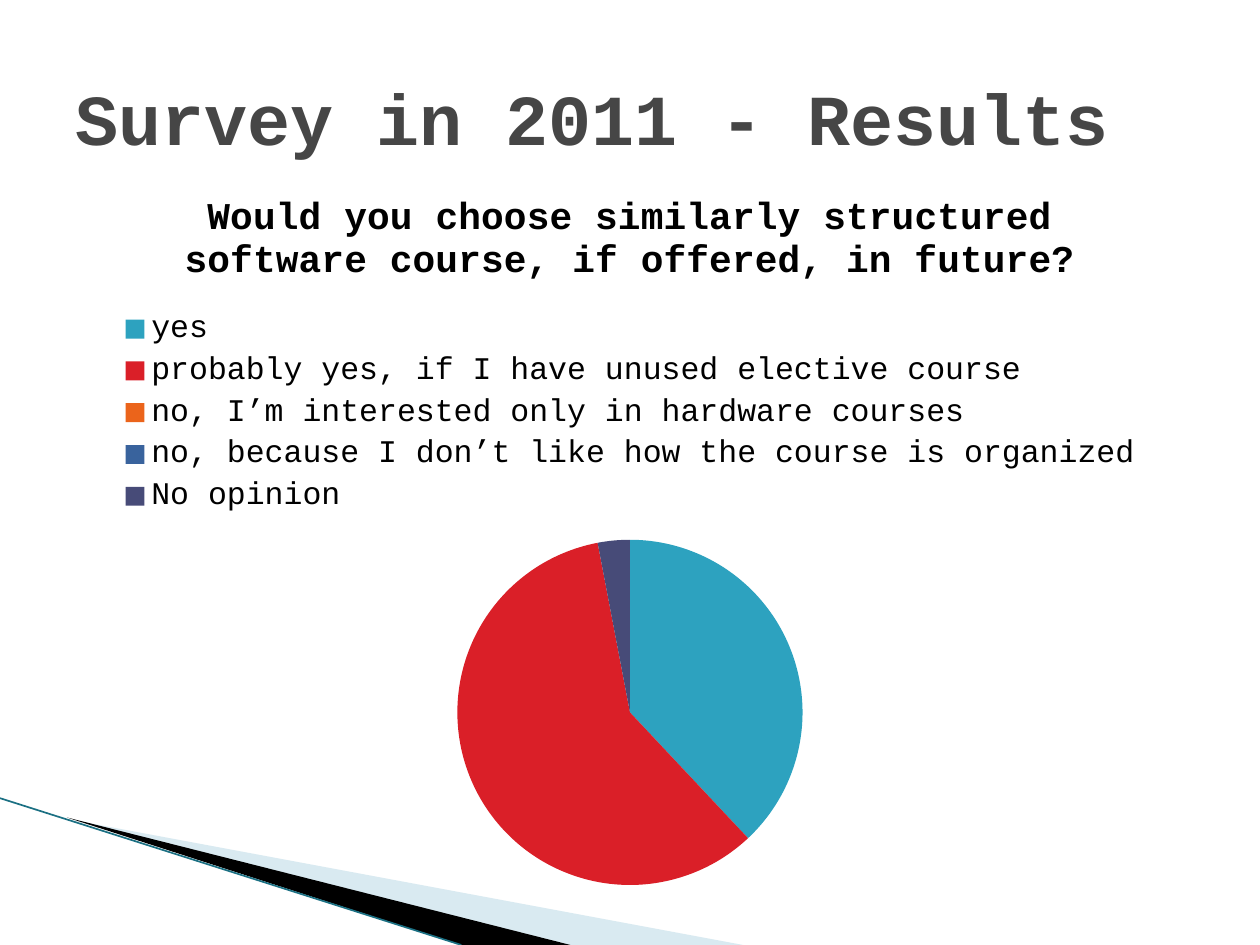
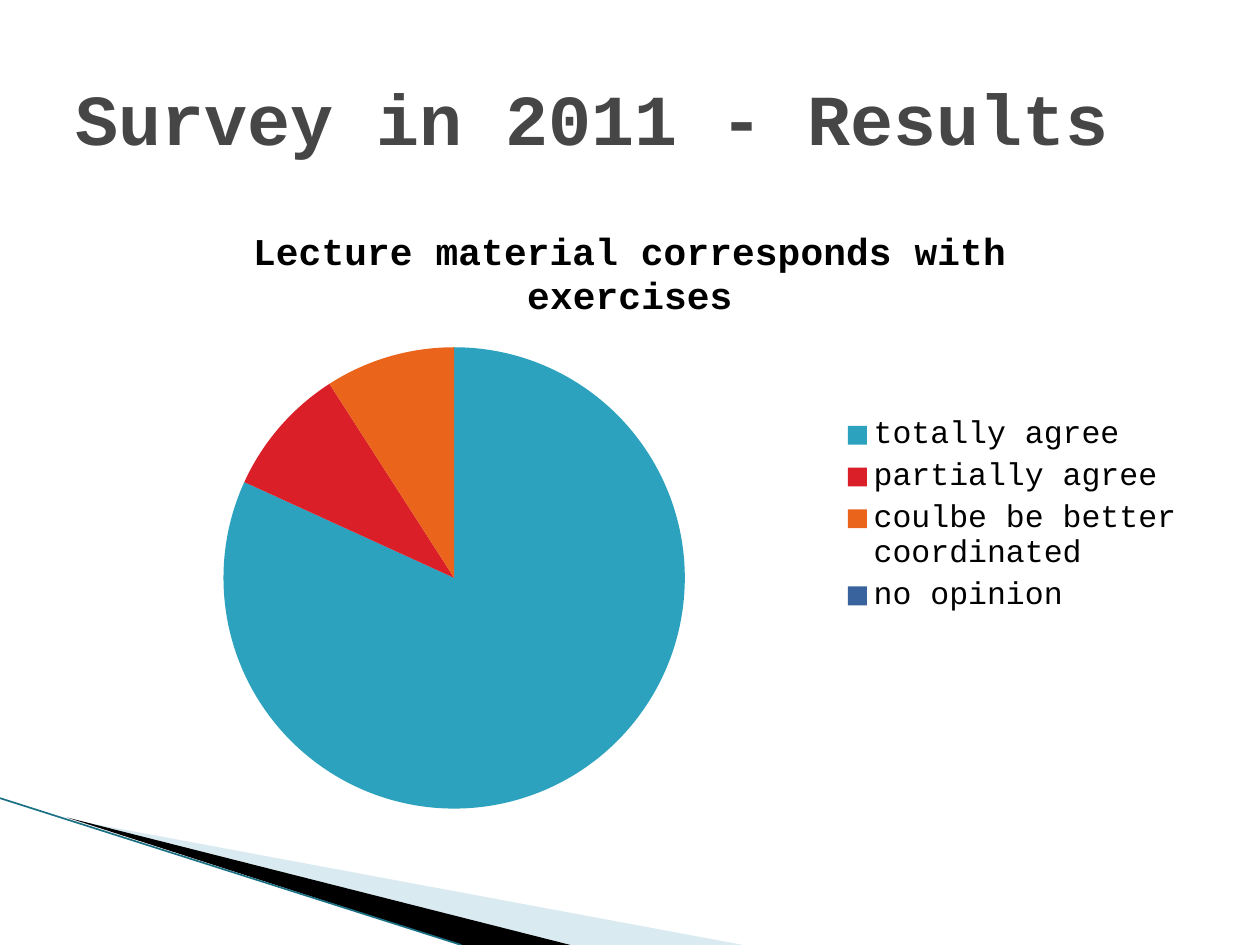
from dataclasses import dataclass

from lxml.etree import SubElement
from pptx import Presentation
from pptx.chart.data import CategoryChartData
from pptx.dml.color import RGBColor
from pptx.enum.chart import XL_CHART_TYPE, XL_LEGEND_POSITION
from pptx.enum.shapes import MSO_CONNECTOR
from pptx.enum.text import MSO_ANCHOR
from pptx.oxml.ns import qn
from pptx.slide import Slide
from pptx.text.text import TextFrame
from pptx.util import Cm, Pt


# Shared look
@dataclass(frozen=True)
class Theme:
    font: str = "Courier New"
    title: str = "464646"
    text: str = "000000"
    edge: str = "1B7083"
    slices: tuple[str, ...] = ("2DA2BF", "DA1F28", "EB641B", "39639D", "474B78")
    title_size: float = 41
    question_size: float = 21.6
    legend_size: float = 18


THEME = Theme()
WIDTH, HEIGHT = 25.4, 19.05


@dataclass(frozen=True)
class Wedge:
    points: tuple[tuple[float, float], ...]
    color: str
    opacity: int = 100


@dataclass(frozen=True)
class Survey:
    question: str
    answers: dict[str, int]
    box: tuple[float, float, float, float]
    pie: tuple[float, float, float, float]  # x, y, w, h as shares of the chart
    legend: XL_LEGEND_POSITION


WEDGES = (
    Wedge(((1.4, 16.52), (14.98, HEIGHT), (11.5, HEIGHT)), "A0CBDC", 40),
    Wedge(((1.35, 16.48), (11.5, HEIGHT), (9.3, HEIGHT)), "000000"),
)

SURVEYS = (
    Survey(
        "Would you choose similarly structured software course, if offered, in future?",
        {
            "yes": 38,
            "probably yes, if I have unused elective course": 59,
            "no, I’m interested only in hardware courses": 0,
            "no, because I don’t like how the course is organized": 0,
            "No opinion": 3,
        },
        (0, 3.33, 25.4, 14.81),
        (0.36, 0.51, 0.28, 0.47),
        XL_LEGEND_POSITION.TOP,
    ),
    Survey(
        "Lecture material corresponds with exercises",
        {
            "totally agree": 81,
            "partially agree": 9,
            "coulbe be better coordinated": 9,
            "no opinion": 0,
        },
        (1.27, 4.11, 22.86, 12.57),
        (0.14, 0.23, 0.41, 0.74),
        XL_LEGEND_POSITION.RIGHT,
    ),
)


def format_font(font, size: float, color: str, bold: bool = False) -> None:
    font.name, font.size, font.bold = THEME.font, Pt(size), bold
    font.color.rgb = RGBColor.from_string(color)


def put_text(tf: TextFrame, text: str, **fmt) -> None:
    r = tf.paragraphs[0].add_run()
    r.text = text
    format_font(r.font, **fmt)


def add_wedge(s: Slide, wedge: Wedge) -> None:
    start, *rest = [(Cm(x), Cm(y)) for x, y in wedge.points]
    builder = s.shapes.build_freeform(*start)
    builder.add_line_segments(rest, close=True)
    sp = builder.convert_to_shape()
    sp.shadow.inherit = False
    sp.fill.solid()
    sp.fill.fore_color.rgb = RGBColor.from_string(wedge.color)
    sp.line.fill.background()
    if wedge.opacity < 100:
        color = sp.fill._xPr.find(f".//{qn('a:srgbClr')}")
        SubElement(color, qn("a:alpha"), val=str(wedge.opacity * 1000))


def add_frame(s: Slide) -> None:
    # Corner decoration
    for wedge in WEDGES:
        add_wedge(s, wedge)
    edge = s.shapes.add_connector(
        MSO_CONNECTOR.STRAIGHT, Cm(0), Cm(16.09), Cm(9.3), Cm(HEIGHT))
    edge.line.width = Pt(0.95)
    edge.line.color.rgb = RGBColor.from_string(THEME.edge)
    SubElement(edge._element.spPr, qn("a:effectLst"))


def add_title(s: Slide, text: str) -> None:
    sp = s.shapes.add_textbox(Cm(1.27), Cm(0.76), Cm(22.86), Cm(3.18))
    tf = sp.text_frame
    tf.word_wrap = True
    tf.vertical_anchor = MSO_ANCHOR.MIDDLE
    put_text(tf, text, size=THEME.title_size, color=THEME.title, bold=True)


def place_pie(chart, pie: tuple[float, float, float, float]) -> None:
    plot_area = chart._chartSpace.chart.plotArea
    for old in plot_area.findall(qn("c:layout")):
        plot_area.remove(old)
    layout = SubElement(plot_area, qn("c:layout"))
    plot_area.insert(0, layout)
    manual = SubElement(layout, qn("c:manualLayout"))
    settings = [("layoutTarget", "inner"), ("xMode", "edge"), ("yMode", "edge")]
    for tag, val in settings + list(zip("xywh", pie)):
        SubElement(manual, qn(f"c:{tag}"), val=str(val))


def add_pie(s: Slide, survey: Survey) -> None:
    data = CategoryChartData()
    data.categories = list(survey.answers)
    data.add_series("Series 1", list(survey.answers.values()))
    box = [Cm(v) for v in survey.box]
    chart = s.shapes.add_chart(XL_CHART_TYPE.PIE, *box, data).chart
    format_font(chart.font, THEME.legend_size, THEME.text)

    # Question and legend
    chart.has_title = True
    put_text(chart.chart_title.text_frame, survey.question,
             size=THEME.question_size, color=THEME.text, bold=True)
    chart.chart_title.include_in_layout = False
    chart.has_legend = True
    chart.legend.position = survey.legend
    chart.legend.include_in_layout = False

    # Slices
    plot = chart.plots[0]
    plot.vary_by_categories = True
    for i, color in enumerate(THEME.slices[:len(survey.answers)]):
        fill = plot.series[0].points[i].format.fill
        fill.solid()
        fill.fore_color.rgb = RGBColor.from_string(color)
    place_pie(chart, survey.pie)


def main() -> None:
    prs = Presentation()
    prs.slide_width, prs.slide_height = Cm(WIDTH), Cm(HEIGHT)
    for survey in SURVEYS:
        s = prs.slides.add_slide(prs.slide_layouts[6])
        add_frame(s)
        add_pie(s, survey)
        add_title(s, "Survey in 2011 - Results")
    prs.save("out.pptx")


if __name__ == "__main__":
    main()
